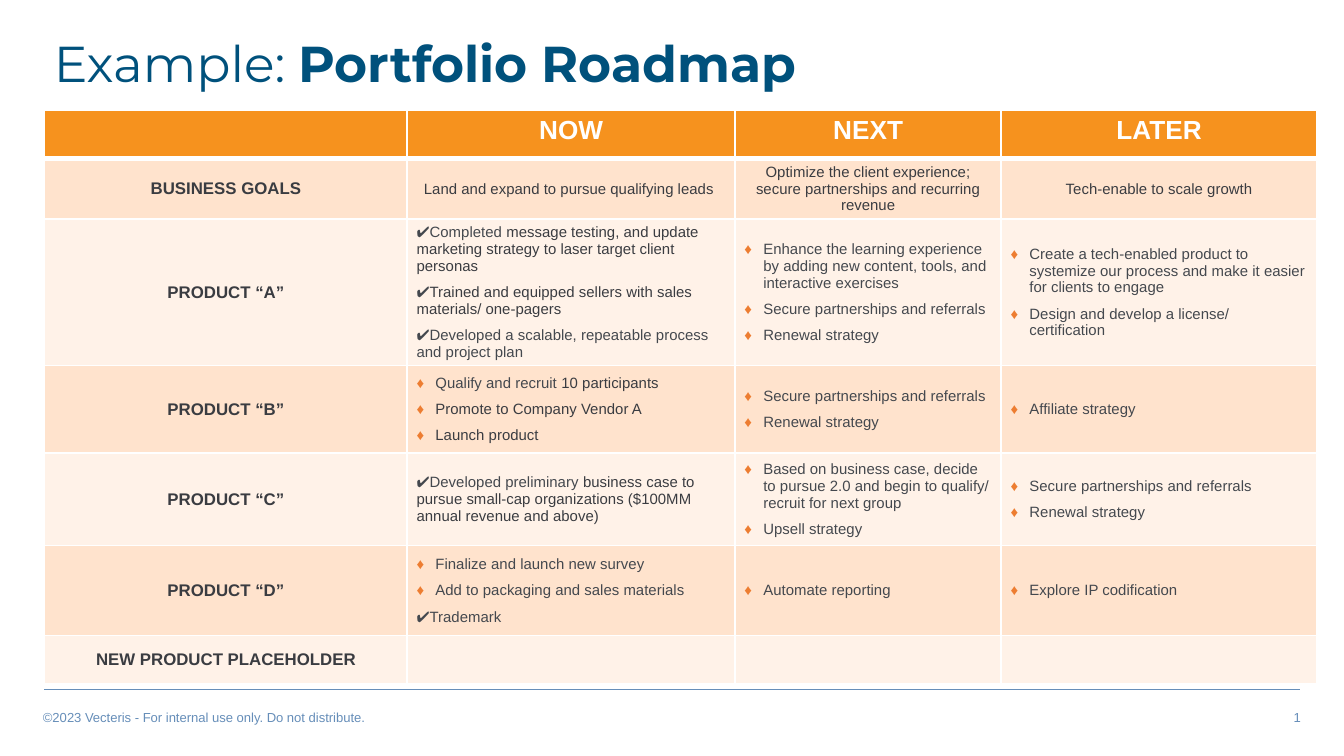
from pptx import Presentation
from pptx.dml.color import RGBColor
from pptx.enum.shapes import MSO_CONNECTOR as Conn
from pptx.enum.text import MSO_ANCHOR as Anchor, PP_ALIGN as Align
from pptx.oxml.ns import qn
from pptx.util import Inches, Pt
from lxml.etree import SubElement as Sub

WHITE, ORANGE, BLUE, NAVY = "FFFFFF", "F6921E", "668EB9", "00517C"
DARK, GREY, BULLET = "3A3C41", "44484E", "ED7D31"
BANDS = ["FFE3CD", "FFF2E8"]
WIDTHS = [2.7, 2.44, 1.98, 2.35]
HEIGHTS = [0.36, 0.45, 1.08, 0.65, 0.69, 0.67, 0.36]

HEADS = ["", "NOW", "NEXT", "LATER"]
GOALS = ["Land and expand to pursue qualifying leads ",
         "Optimize the client experience; secure partnerships and recurring revenue",
         "Tech-enable to scale growth"]
SHARED = ["Secure partnerships and referrals", "Renewal strategy"]
ROWS = [
    ("PRODUCT “A”",
     ["✔Completed |message testing, and update marketing strategy to laser target client personas",
      "✔|Trained and equipped sellers with sales materials/ one-pagers",
      "✔Developed a scalable, repeatable process and project plan"],
     ["Enhance the learning experience by adding new content, tools, and interactive exercises",
      *SHARED],
     ["Create a tech-enabled product to systemize our process and make it easier for clients to engage",
      "Design and develop a license/ certification"]),
    ("PRODUCT “B”",
     ["Qualify and recruit |10 participants", "|Promote to Company Vendor A", "|Launch product"],
     SHARED,
     ["Affiliate strategy"]),
    ("PRODUCT “C”",
     ["✔Developed preliminary |business case to pursue small-cap organizations "
      "($100MM annual revenue and above)"],
     ["Based on business case, decide to pursue 2.0 and begin to qualify/ recruit for next group",
      "Upsell strategy"],
     SHARED),
    ("PRODUCT “D”",
     ["Finalize and launch new survey", "Add to packaging and sales materials", "✔Trademark"],
     ["Automate reporting"],
     ["Explore IP codification"]),
    ("NEW PRODUCT PLACEHOLDER", [], [], []),
]


def color(code):
    return RGBColor.from_string(code)


class Deck:
    """Holds the fonts, the file and the current slide."""

    def __init__(self):
        self.body, self.head = "Arial", "Montserrat"
        self.prs = Presentation()
        self.prs.slide_width = Inches(10)
        self.prs.slide_height = Inches(10) * 9 // 16
        self.slide = self.prs.slides.add_slide(self.prs.slide_layouts[6])

    def run(self, para, text, size, tint, bold=False, face=None):
        run = para.add_run()
        run.text = text
        font = run.font
        font.name, font.size, font.bold = face or self.body, Pt(size), bold
        font.color.rgb = color(tint)

    def text(self, box, align=Align.LEFT):
        frame = self.slide.shapes.add_textbox(*map(Inches, box)).text_frame
        frame.word_wrap = True
        frame.margin_left = frame.margin_right = Inches(0.07)
        frame.margin_top = frame.margin_bottom = Inches(0.04)
        para = frame.paragraphs[0]
        para.alignment = align
        return para

    def line(self, left, right, y, tint):
        line = self.slide.shapes.add_connector(
            Conn.STRAIGHT, Inches(left), Inches(y), Inches(right), Inches(y))
        line.line.color.rgb, line.line.width = color(tint), Pt(1)
        Sub(line._element.spPr, qn("a:effectLst"))

    def table(self, left, top, widths, heights):
        frame = self.slide.shapes.add_table(
            len(heights), len(widths), Inches(left), Inches(top),
            Inches(sum(widths)), Inches(sum(heights)))
        table = frame.table
        for col, width in zip(table.columns, widths):
            col.width = Inches(width)
        for row, height in zip(table.rows, heights):
            row.height = Inches(height)
        for r in range(len(heights)):
            for c in range(len(widths)):
                self.cell(table.cell(r, c), r)
        return table

    def cell(self, cell, row):
        cell.margin_left = cell.margin_right = Inches(0.07)
        cell.margin_top = cell.margin_bottom = Inches(0.01 if row else 0.04)
        cell.vertical_anchor = Anchor.MIDDLE if row else Anchor.TOP
        props = cell._tc.get_or_add_tcPr()
        wide = {"lnB": row == 0, "lnT": row == 1}
        for side in ("lnL", "lnR", "lnT", "lnB"):
            edge = Sub(props, qn(f"a:{side}"), w=str(Pt(3 if wide.get(side) else 1)))
            Sub(Sub(edge, qn("a:solidFill")), qn("a:srgbClr"), val=WHITE)
        cell.fill.solid()
        cell.fill.fore_color.rgb = color(BANDS[(row - 1) % 2] if row else ORANGE)

    def label(self, cell, text, size, tint, bold=True):
        para = cell.text_frame.paragraphs[0]
        para.alignment = Align.CENTER
        para.font.size = Pt(size)
        if text:
            self.run(para, text, size, tint, bold)

    def items(self, cell, items):
        frame = cell.text_frame
        for i, item in enumerate(items):
            para = frame.add_paragraph() if i else frame.paragraphs[0]
            if i:
                para.space_before = Pt(5)
            if not item.startswith("✔"):
                self.bullet(para)
            para.font.size = Pt(8)
            for part, tint in zip(item.split("|"), (GREY, DARK)):
                if part:
                    self.run(para, part, 8, tint)

    def bullet(self, para):
        props = para._p.get_or_add_pPr()
        props.set("marL", str(Inches(0.14)))
        props.set("indent", str(-Inches(0.14)))
        Sub(Sub(props, qn("a:buClr")), qn("a:srgbClr"), val=BULLET)
        Sub(props, qn("a:buFont"), typeface=self.body)
        Sub(props, qn("a:buChar"), char="♦")


def main():
    deck = Deck()
    deck.line(0.33, 9.67, 5.13, BLUE)
    deck.run(deck.text((0.25, 5.24, 4, 0.19)),
             "©2023 Vecteris - For internal use only. Do not distribute.", 7, BLUE)
    deck.run(deck.text((5.75, 5.24, 4, 0.19), Align.RIGHT), "1", 7, BLUE)

    title = deck.text((0.33, 0.25, 6.39, 0.57))
    title.line_spacing = 0.9
    deck.run(title, "Example: ", 27, NAVY, face=deck.head)
    deck.run(title, "Portfolio Roadmap", 27, NAVY, True, deck.head)

    table = deck.table(0.33, 0.82, WIDTHS, HEIGHTS)
    for c, head in enumerate(HEADS):
        deck.label(table.cell(0, c), head, 14, WHITE)
    deck.label(table.cell(1, 0), "BUSINESS GOALS", 9, DARK)
    for c, goal in enumerate(GOALS, 1):
        deck.label(table.cell(1, c), goal, 8, DARK, False)
    for r, (name, *plans) in enumerate(ROWS, 2):
        deck.label(table.cell(r, 0), name, 9, DARK)
        for c, plan in enumerate(plans, 1):
            deck.items(table.cell(r, c), plan)
    deck.prs.save("out.pptx")


if __name__ == "__main__":
    main()
